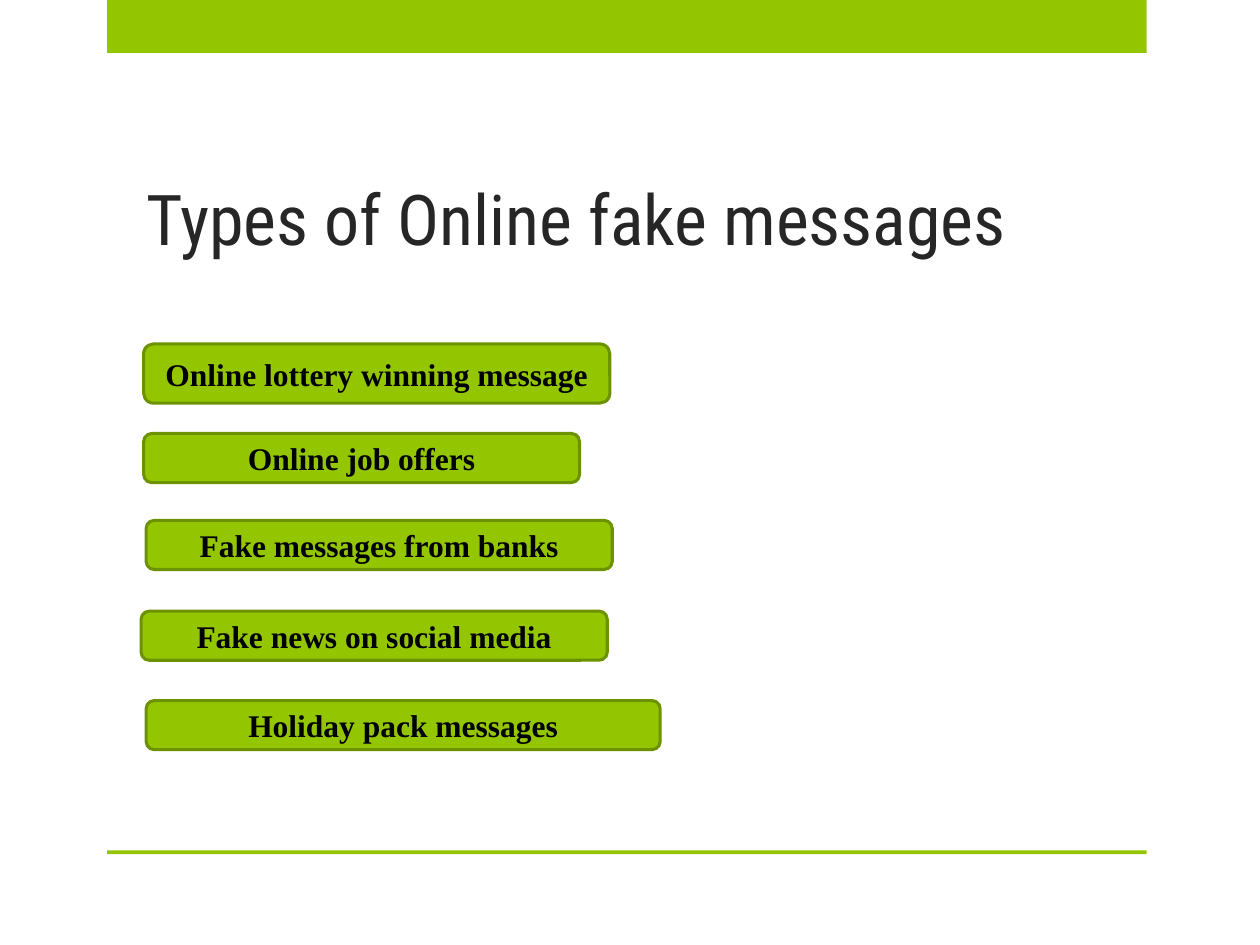
from dataclasses import dataclass

from pptx import Presentation
from pptx.dml.color import RGBColor
from pptx.enum.shapes import MSO_SHAPE
from pptx.enum.text import MSO_ANCHOR, PP_ALIGN
from pptx.util import Inches, Pt


@dataclass(frozen=True)
class Theme:
    green: RGBColor = RGBColor.from_string("94C600")
    outline: RGBColor = RGBColor.from_string("6D9200")
    title_color: RGBColor = RGBColor.from_string("262626")
    label_color: RGBColor = RGBColor.from_string("000000")
    title_font: str = "Roboto Condensed"
    label_font: str = "Times New Roman"
    title_size: int = 40
    label_size: int = 18
    outline_width: float = 1.75


THEME = Theme()
TITLE = "Types of Online fake messages"
TITLE_BOX = (1.06, 0.36, 7.42, 1.75)
BANDS = [(0.85, 0, 8.25, 0.42), (0.85, 6.75, 8.25, 0.03)]
# label, (left, top, width, height)
MESSAGE_TYPES = [
    ("Online lottery winning message", (1.14, 2.73, 3.7, 0.47)),
    ("Online job offers", (1.14, 3.44, 3.46, 0.39)),
    ("Fake messages from banks", (1.16, 4.13, 3.7, 0.39)),
    ("Fake news on social media", (1.12, 4.85, 3.7, 0.39)),
    ("Holiday pack messages", (1.16, 5.56, 4.08, 0.39)),
]


def add_green_shape(s, kind, box):
    sp = s.shapes.add_shape(kind, *map(Inches, box))
    sp.shadow.inherit = False
    sp.fill.solid()
    sp.fill.fore_color.rgb = THEME.green
    sp.line.fill.background()
    return sp


def write_text(sp, text, font, size, color, align, anchor, bold=False):
    tf = sp.text_frame
    tf.word_wrap = True
    tf.vertical_anchor = anchor
    p = tf.paragraphs[0]
    p.alignment = align
    r = p.add_run()
    r.text = text
    r.font.name = font
    r.font.size = Pt(size)
    r.font.bold = bold
    r.font.color.rgb = color


def add_message_type(s, label, box):
    sp = add_green_shape(s, MSO_SHAPE.ROUNDED_RECTANGLE, box)
    sp.line.color.rgb = THEME.outline
    sp.line.width = Pt(THEME.outline_width)
    write_text(sp, label, THEME.label_font, THEME.label_size,
               THEME.label_color, PP_ALIGN.CENTER, MSO_ANCHOR.MIDDLE, bold=True)


def main():
    prs = Presentation()
    prs.slide_width, prs.slide_height = Inches(10), Inches(7.5)
    s = prs.slides.add_slide(prs.slide_layouts[5])

    for box in BANDS:
        add_green_shape(s, MSO_SHAPE.RECTANGLE, box)

    title = s.shapes.title
    title.left, title.top, title.width, title.height = map(Inches, TITLE_BOX)
    write_text(title, TITLE, THEME.title_font, THEME.title_size,
               THEME.title_color, PP_ALIGN.LEFT, MSO_ANCHOR.BOTTOM)

    for label, box in MESSAGE_TYPES:
        add_message_type(s, label, box)

    prs.save("out.pptx")


if __name__ == "__main__":
    main()
